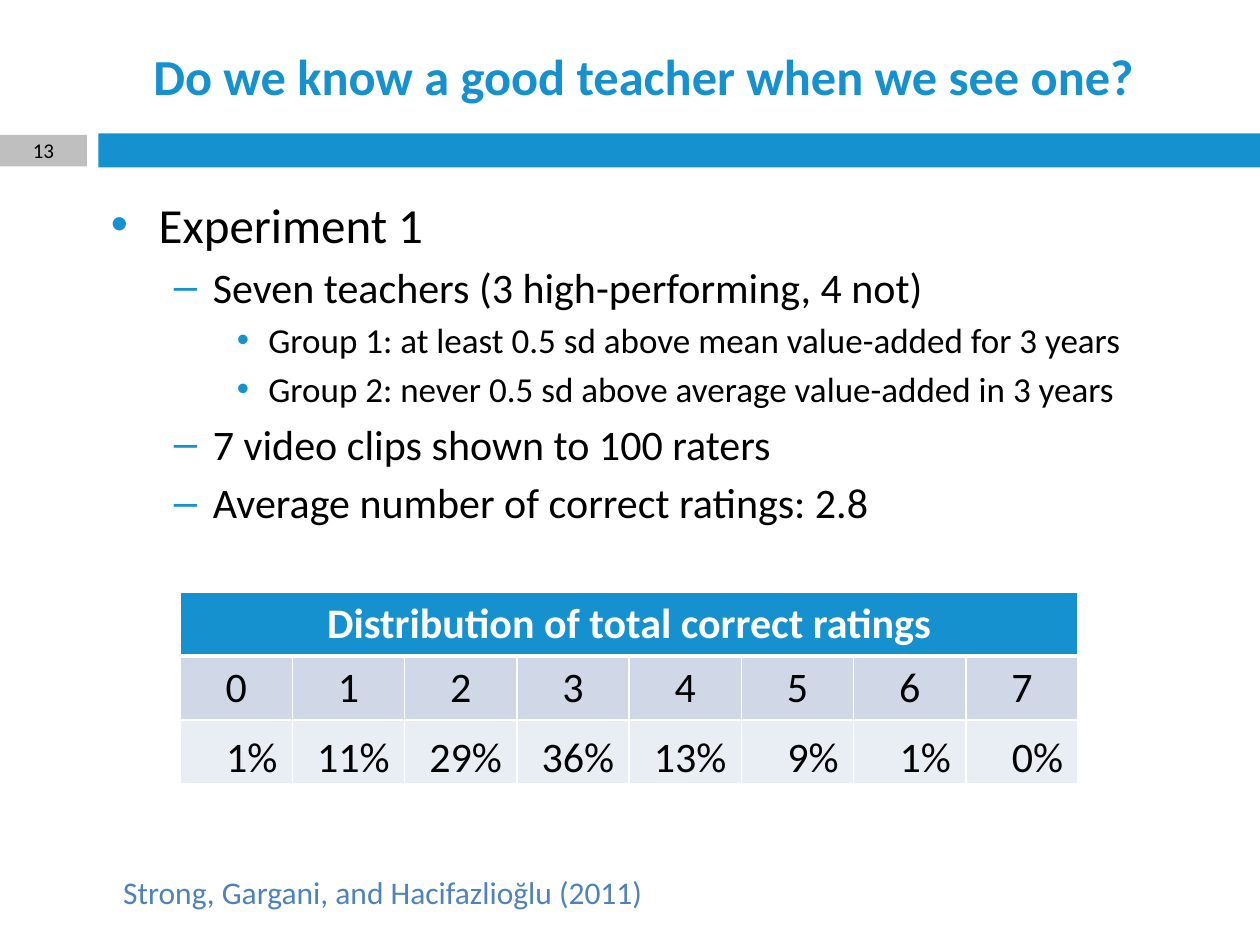
from lxml import etree
from pptx import Presentation
from pptx.dml.color import RGBColor
from pptx.enum.shapes import MSO_SHAPE
from pptx.enum.text import MSO_ANCHOR, MSO_AUTO_SIZE, PP_ALIGN
from pptx.oxml.ns import qn
from pptx.util import Inches, Pt

RECTANGLE = MSO_SHAPE.RECTANGLE
CENTER, RIGHT = PP_ALIGN.CENTER, PP_ALIGN.RIGHT
MIDDLE, BOTTOM = MSO_ANCHOR.MIDDLE, MSO_ANCHOR.BOTTOM
NO_AUTOFIT = MSO_AUTO_SIZE.NONE

BLUE = RGBColor(0x16, 0x91, 0xD0)
GRAY = RGBColor(0xBF, 0xBF, 0xBF)
CITATION_BLUE = RGBColor(0x4F, 0x81, 0xBD)
COUNT_FILL = RGBColor(0xD0, 0xD8, 0xE8)
SHARE_FILL = RGBColor(0xE9, 0xED, 0xF4)
BLACK = RGBColor(0, 0, 0)
WHITE = RGBColor(0xFF, 0xFF, 0xFF)

OUTLINE = [
    (0, "Experiment 1"),
    (1, "Seven teachers (3 high-performing, 4 not)"),
    (2, "Group 1: at least 0.5 sd above mean value-added for 3 years"),
    (2, "Group 2: never 0.5 sd above average value-added in 3 years"),
    (1, "7 video clips shown to 100 raters"),
    (1, "Average number of correct ratings: 2.8"),
]
LEVELS = [
    (28, 0.38, 0.38, "•"),
    (24, 0.81, 0.31, "–"),
    (20, 1.25, 0.25, "•"),
]
RATING_SHARES = ["1%", "11%", "29%", "36%", "13%", "9%", "1%", "0%"]


def format_runs(paragraph, size, color, bold=False):
    for run in paragraph.runs:
        run.font.name = "Calibri"
        run.font.size = Pt(size)
        run.font.bold = bold
        run.font.color.rgb = color


def place(placeholder, left, top, width, height):
    placeholder.left, placeholder.top = left, top
    placeholder.width, placeholder.height = width, height


def add_title(slide, text, box):
    title = slide.shapes.title
    place(title, *box)
    frame = title.text_frame
    frame.text = text
    frame.word_wrap = True
    frame.auto_size = NO_AUTOFIT
    frame.vertical_anchor = MIDDLE
    frame.paragraphs[0].alignment = CENTER
    format_runs(frame.paragraphs[0], 28.8, BLUE, bold=True)


def add_band(slide, fill, box):
    band = slide.shapes.add_shape(RECTANGLE, *box)
    band.shadow.inherit = False
    band.fill.solid()
    band.fill.fore_color.rgb = fill
    band.line.fill.background()
    return band


def add_header_bar(slide, number, left, top, width, height):
    add_band(slide, BLUE, (left + Inches(0.78), top, width - Inches(0.78), height))
    number_tab = add_band(
        slide, GRAY, (left, top + Inches(0.01), Inches(0.69), height - Inches(0.02))
    )
    frame = number_tab.text_frame
    frame.text = number
    frame.vertical_anchor = MIDDLE
    frame.margin_top = frame.margin_bottom = 0
    frame.paragraphs[0].alignment = CENTER
    format_runs(frame.paragraphs[0], 12, BLACK)


def set_bullet(paragraph, indent, hanging, symbol):
    properties = paragraph._p.get_or_add_pPr()
    properties.set("marL", str(Inches(indent)))
    properties.set("indent", str(-Inches(hanging)))
    color = etree.SubElement(properties, qn("a:buClr"))
    etree.SubElement(color, qn("a:srgbClr"), val=str(BLUE))
    etree.SubElement(properties, qn("a:buFont"), typeface="Arial")
    etree.SubElement(properties, qn("a:buChar"), char=symbol)


def add_outline(slide, items, box):
    body = slide.placeholders[1]
    place(body, *box)
    frame = body.text_frame
    frame.word_wrap = True
    frame.auto_size = NO_AUTOFIT
    for index, (level, text) in enumerate(items):
        paragraph = frame.add_paragraph() if index else frame.paragraphs[0]
        size, indent, hanging, symbol = LEVELS[level]
        paragraph.text = text
        paragraph.level = level
        set_bullet(paragraph, indent, hanging, symbol)
        paragraph.space_before = Pt(size * 0.2 if index else 0)
        format_runs(paragraph, size, BLACK)


def set_borders(cell, bottom_width):
    properties = cell._tc.get_or_add_tcPr()
    for side, width in (("L", 1), ("R", 1), ("T", 1), ("B", bottom_width)):
        border = etree.SubElement(properties, qn(f"a:ln{side}"), w=str(Pt(width)))
        fill = etree.SubElement(border, qn("a:solidFill"))
        etree.SubElement(fill, qn("a:srgbClr"), val=str(WHITE))


def fill_cell(cell, text, fill, color, alignment, bold=False, bottom_width=1):
    set_borders(cell, bottom_width)
    cell.fill.solid()
    cell.fill.fore_color.rgb = fill
    paragraph = cell.text_frame.paragraphs[0]
    paragraph.text = text
    paragraph.alignment = alignment
    format_runs(paragraph, 24, color, bold)


def add_ratings_table(slide, heading, shares, left, top, width, height):
    count = len(shares)
    table = slide.shapes.add_table(3, count, left, top, width, height).table
    table.cell(0, 0).merge(table.cell(0, count - 1))
    fill_cell(table.cell(0, 0), heading, BLUE, WHITE, CENTER, bold=True, bottom_width=3)
    for correct, share in enumerate(shares):
        fill_cell(table.cell(1, correct), str(correct), COUNT_FILL, BLACK, CENTER)
        share_cell = table.cell(2, correct)
        fill_cell(share_cell, share, SHARE_FILL, BLACK, RIGHT)
        share_cell.vertical_anchor = BOTTOM
        share_cell.margin_left = share_cell.margin_top = Inches(0.01)
        share_cell.margin_right = Inches(0.12)
        share_cell.margin_bottom = 0


def add_citation(slide, text, box):
    citation = slide.shapes.add_textbox(*box)
    frame = citation.text_frame
    frame.word_wrap = True
    frame.text = text
    format_runs(frame.paragraphs[0], 18, CITATION_BLUE)


def main():
    deck = Presentation()
    deck.slide_width, deck.slide_height = Inches(10), Inches(7.5)
    slide = deck.slides.add_slide(deck.slide_layouts[1])
    add_header_bar(slide, "13", 0, Inches(1.06), deck.slide_width, Inches(0.27))
    add_title(
        slide,
        "Do we know a good teacher when we see one?",
        (Inches(0.78), Inches(0.26), Inches(8.66), Inches(0.68)),
    )
    add_outline(
        slide, OUTLINE, (Inches(0.78), Inches(1.49), Inches(9.33), Inches(3.12))
    )
    add_ratings_table(
        slide,
        "Distribution of total correct ratings",
        RATING_SHARES,
        Inches(1.43), Inches(4.7), Inches(7.13), Inches(1.52),
    )
    add_citation(
        slide,
        "Strong, Gargani, and Hacifazlioğlu (2011)",
        (Inches(0.88), Inches(6.88), Inches(6.94), Inches(0.4)),
    )
    deck.save("out.pptx")


if __name__ == "__main__":
    main()
